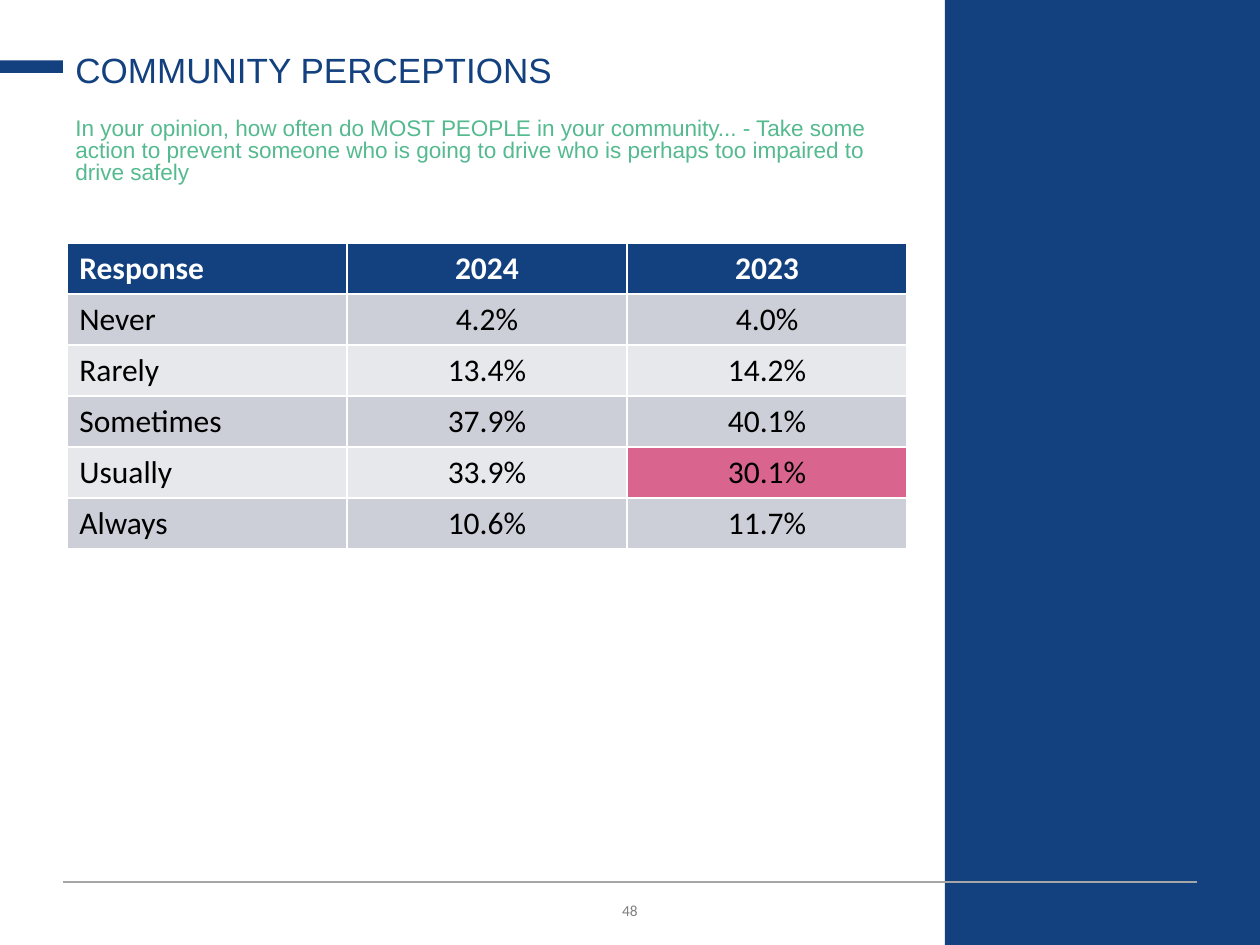
from lxml.etree import SubElement
from pptx import Presentation
from pptx.dml.color import RGBColor
from pptx.enum.shapes import MSO_CONNECTOR, MSO_SHAPE
from pptx.enum.text import MSO_ANCHOR, PP_ALIGN
from pptx.oxml.ns import qn
from pptx.util import Inches, Pt

COLORS = {
    "navy": "13407E", "green": "55BA8F", "pink": "D9648D", "rule": "A6A6A6",
    "number": "808080", "white": "FFFFFF", "black": "000000",
    "odd_row": "CCCFD8", "even_row": "E7E8EC",
}
UNIT = Inches(0.1)
COLUMNS, ROWS = 100, 75  # grid of the whole slide

QUESTION = (
    "In your opinion, how often do MOST PEOPLE in your community... - Take some "
    "action to prevent someone who is going to drive who is perhaps too impaired "
    "to drive safely"
)
RESPONSES = [
    ("Response", "2024", "2023"),
    ("Never", "4.2%", "4.0%"),
    ("Rarely", "13.4%", "14.2%"),
    ("Sometimes", "37.9%", "40.1%"),
    ("Usually", "33.9%", "30.1%"),
    ("Always", "10.6%", "11.7%"),
]
HIGHLIGHT = (4, 2)


def grid(*cells):
    return [round(cell * UNIT) for cell in cells]


def color(name):
    return RGBColor.from_string(COLORS[name])


def style(para, font, size, ink, align=PP_ALIGN.LEFT, bold=False):
    para.alignment = align
    para.font.name = font
    para.font.size = Pt(size)
    para.font.bold = bold
    para.font.color.rgb = color(ink)


def add_text(page, area, text, font, size, ink, anchor=MSO_ANCHOR.TOP,
             spacing=1.0, align=PP_ALIGN.LEFT):
    frame = page.shapes.add_textbox(*grid(*area)).text_frame
    frame.word_wrap = True
    frame.vertical_anchor = anchor
    para = frame.paragraphs[0]
    para.text = text
    para.line_spacing = spacing
    style(para, font, size, ink, align)
    return para


def add_block(page, area):
    block = page.shapes.add_shape(MSO_SHAPE.RECTANGLE, *grid(*area))
    block.shadow.inherit = False
    block.fill.solid()
    block.fill.fore_color.rgb = color("navy")
    block.line.fill.background()


def add_footer(page, left, top, width):
    """Page number and the rule above it, across the given width."""
    rule = page.shapes.add_connector(
        MSO_CONNECTOR.STRAIGHT, *grid(left, top, left + width, top))
    rule.line.color.rgb = color("rule")
    rule.line.width = Pt(0.75)
    SubElement(rule._element.spPr, qn("a:effectLst"))
    number = add_text(page, (left, top + 0.6, width, 3), "48", "Calibri", 11,
                      "number", MSO_ANCHOR.MIDDLE, align=PP_ALIGN.CENTER)
    number.font._element.set("cap", "small")


def add_heading(page, left, top, width):
    """Title with the survey question below it."""
    add_text(page, (left, top, width, 4.8), "COMMUNITY PERCEPTIONS", "Arial", 20,
             "navy", MSO_ANCHOR.BOTTOM, spacing=0.9)
    add_text(page, (left, top + 6.1, width, 6.7), QUESTION, "Arial", 12.9,
             "green", spacing=0.8)


def cell_fill(row, column):
    if row == 0:
        return "navy"
    if (row, column) == HIGHLIGHT:
        return "pink"
    return "odd_row" if row % 2 else "even_row"


def add_responses(page, area):
    table = page.shapes.add_table(
        len(RESPONSES), len(RESPONSES[0]), *grid(*area)).table
    for row, values in enumerate(RESPONSES):
        for column, value in enumerate(values):
            cell = table.cell(row, column)
            cell.fill.solid()
            cell.fill.fore_color.rgb = color(cell_fill(row, column))
            cell.text = value
            style(cell.text_frame.paragraphs[0], "Calibri", 18,
                  "black" if row else "white",
                  PP_ALIGN.CENTER if column else PP_ALIGN.LEFT, bold=row == 0)


def main():
    deck = Presentation()
    deck.slide_width, deck.slide_height = grid(COLUMNS, ROWS)
    page = deck.slides.add_slide(deck.slide_layouts[6])
    add_block(page, (COLUMNS * 0.75, 0, COLUMNS * 0.25, ROWS))
    add_block(page, (0, 4.8, 5, 1))
    add_footer(page, 5, 70, COLUMNS - 10)
    add_heading(page, 5, 2.9, 67)
    add_responses(page, (5.3, 19.3, 66.7, 24.3))
    deck.save("out.pptx")


if __name__ == "__main__":
    main()
